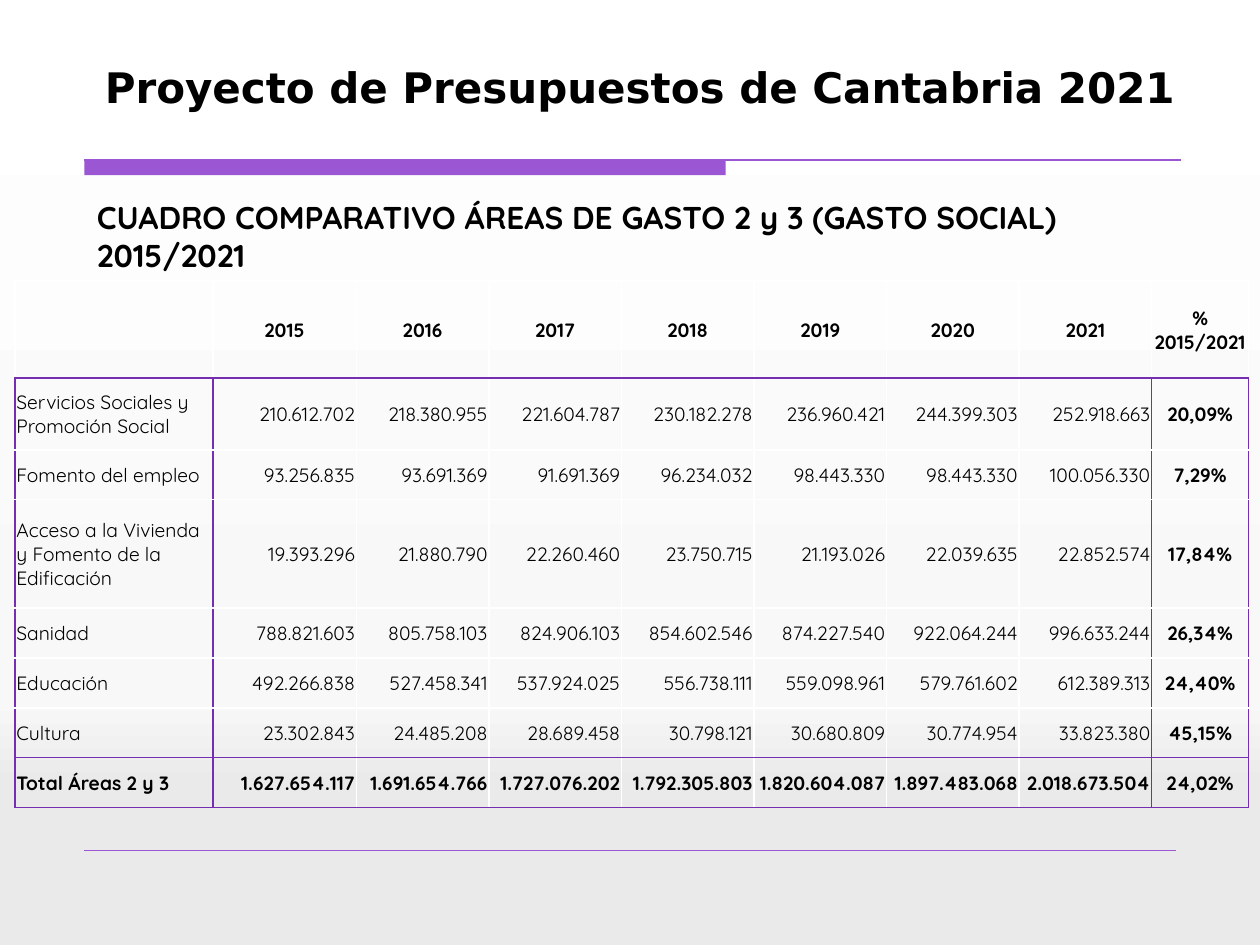
from dataclasses import dataclass
from typing import Any

from lxml import etree
from pptx import Presentation
from pptx.dml.color import RGBColor
from pptx.enum import shapes, text
from pptx.oxml import ns
from pptx.util import Pt

BLACK = RGBColor(0x00, 0x00, 0x00)
WHITE = RGBColor(0xFF, 0xFF, 0xFF)
PURPLE = RGBColor(0x9B, 0x57, 0xD3)
DEEP_PURPLE = RGBColor(0x76, 0x2E, 0xB1)
PALE_GREY = RGBColor(0xF8, 0xF8, 0xF8)
LIGHT_GREY = RGBColor(0xEA, 0xEA, 0xEA)
BACKDROP = [(0, WHITE), (74, PALE_GREY), (83, LIGHT_GREY), (100, LIGHT_GREY)]

LEFT, CENTER, RIGHT = text.PP_ALIGN.LEFT, text.PP_ALIGN.CENTER, text.PP_ALIGN.RIGHT
TITLE_FONT = {"name": "DejaVu Sans", "size": Pt(24), "bold": True}
SUBTITLE_FONT = {"name": "Quicksand", "size": Pt(18), "bold": True}
CELL_FONT = {"name": "Quicksand", "size": Pt(11), "bold": False}
CELL_FORMAT = {
    "margin_left": Pt(0.72),
    "margin_top": Pt(0.72),
    "margin_right": Pt(0.72),
    "margin_bottom": Pt(0),
    "vertical_anchor": text.MSO_ANCHOR.MIDDLE,
}
HEADING_FORMAT = {
    "word_wrap": True,
    "auto_size": text.MSO_AUTO_SIZE.NONE,
    "vertical_anchor": text.MSO_ANCHOR.TOP,
}

COLUMN_WIDTHS = [113, 82] + [75.75] * 6 + [55.5]
ROW_HEIGHTS = [55.5, 41, 28.5, 62] + [28.5] * 4
BUDGET = [
    ["", "2015", "2016", "2017", "2018", "2019", "2020", "2021", "% 2015/2021"],
    ["Servicios Sociales y Promoción Social", "210.612.702", "218.380.955", "221.604.787",
     "230.182.278", "236.960.421", "244.399.303", "252.918.663", "20,09%"],
    ["Fomento del empleo", "93.256.835", "93.691.369", "91.691.369",
     "96.234.032", "98.443.330", "98.443.330", "100.056.330", "7,29%"],
    ["Acceso a la Vivienda y Fomento de la Edificación", "19.393.296", "21.880.790",
     "22.260.460", "23.750.715", "21.193.026", "22.039.635", "22.852.574", "17,84%"],
    ["Sanidad", "788.821.603", "805.758.103", "824.906.103",
     "854.602.546", "874.227.540", "922.064.244", "996.633.244", "26,34%"],
    ["Educación", "492.266.838", "527.458.341", "537.924.025",
     "556.738.111", "559.098.961", "579.761.602", "612.389.313", "24,40%"],
    ["Cultura", "23.302.843", "24.485.208", "28.689.458",
     "30.798.121", "30.680.809", "30.774.954", "33.823.380", "45,15%"],
    ["Total Áreas 2 y 3", "1.627.654.117", "1.691.654.766", "1.727.076.202",
     "1.792.305.803", "1.820.604.087", "1.897.483.068", "2.018.673.504", "24,02%"],
]
TOTAL_ROW = len(BUDGET) - 1
PERCENT_COLUMN = len(COLUMN_WIDTHS) - 1
PURPLE_VERTICALS = {0, 1, PERCENT_COLUMN, PERCENT_COLUMN + 1}
PURPLE_HORIZONTALS = {1, TOTAL_ROW, TOTAL_ROW + 1}


@dataclass
class Rule:
    left: float
    right: float
    top: float
    weight: float


RULES = [Rule(48.24, 674.64, 91.44, 0.75), Rule(48.24, 671.76, 486, 0.25)]


def apply(target: Any, values: dict) -> None:
    for key, value in values.items():
        setattr(target, key, value)


def add_element(parent: Any, tag: str, **attributes: str) -> Any:
    return etree.SubElement(parent, ns.qn(tag), attributes)


def write(frame: Any, words: str, font: dict, align: Any) -> None:
    paragraph = frame.paragraphs[0]
    paragraph.alignment = align
    run = paragraph.add_run()
    run.text = words
    apply(run.font, font)
    run.font.color.rgb = BLACK


def paint_backdrop(slide: Any) -> None:
    fill = slide.background.fill
    fill.gradient()
    fill.gradient_angle = 270
    stops = next(slide.element.iter(ns.qn("a:gsLst")))
    for stop in list(stops):
        stops.remove(stop)
    for percent, color in BACKDROP:
        stop = add_element(stops, "a:gs", pos=str(percent * 1000))
        add_element(stop, "a:srgbClr", val=str(color))


def draw_rule(slide: Any, rule: Rule) -> None:
    line = slide.shapes.add_connector(
        shapes.MSO_CONNECTOR.STRAIGHT,
        Pt(rule.left), Pt(rule.top), Pt(rule.right), Pt(rule.top))
    line.line.color.rgb = PURPLE
    line.line.width = Pt(rule.weight)
    add_element(line.element.spPr, "a:effectLst")


def draw_accent_bar(slide: Any) -> None:
    bar = slide.shapes.add_shape(
        shapes.MSO_SHAPE.RECTANGLE, Pt(48.24), Pt(91.44), Pt(366.5), Pt(8.64))
    bar.shadow.inherit = False
    bar.fill.solid()
    bar.fill.fore_color.rgb = PURPLE
    bar.line.fill.background()


def draw_borders(cell: Any, row: int, column: int) -> None:
    properties = cell._tc.get_or_add_tcPr()
    edges = {
        "a:lnL": row > 0 and column in PURPLE_VERTICALS,
        "a:lnR": row > 0 and column + 1 in PURPLE_VERTICALS,
        "a:lnT": row in PURPLE_HORIZONTALS,
        "a:lnB": row + 1 in PURPLE_HORIZONTALS,
    }
    for tag, is_purple in edges.items():
        edge = add_element(properties, tag, w=str(Pt(1)))
        fill = add_element(edge, "a:solidFill")
        add_element(fill, "a:srgbClr", val=str(DEEP_PURPLE if is_purple else WHITE))


def fill_cell(cell: Any, words: str, row: int, column: int) -> None:
    draw_borders(cell, row, column)
    cell.fill.background()
    apply(cell, CELL_FORMAT)
    if not words:
        return
    if row == 0 or column == PERCENT_COLUMN:
        align = CENTER
    else:
        align = RIGHT if column else LEFT
    bold = row in (0, TOTAL_ROW) or column == PERCENT_COLUMN
    write(cell.text_frame, words, CELL_FONT | {"bold": bold}, align)


def draw_budget(slide: Any) -> None:
    budget = slide.shapes.add_table(
        len(BUDGET), len(COLUMN_WIDTHS), Pt(8.64), Pt(160.56),
        Pt(sum(COLUMN_WIDTHS)), Pt(sum(ROW_HEIGHTS))).table
    apply(budget, {"first_row": False, "horz_banding": False})
    for column, width in zip(budget.columns, COLUMN_WIDTHS):
        column.width = Pt(width)
    for row, height in zip(budget.rows, ROW_HEIGHTS):
        row.height = Pt(height)
    for row, entries in enumerate(BUDGET):
        for column, words in enumerate(entries):
            fill_cell(budget.cell(row, column), words, row, column)


def main() -> None:
    deck = Presentation()
    apply(deck, {"slide_width": Pt(720), "slide_height": Pt(540)})
    slide = deck.slides.add_slide(deck.slide_layouts[5])
    paint_backdrop(slide)

    title = slide.shapes.title
    apply(title, {"left": Pt(48.24), "top": Pt(31.68), "width": Pt(635), "height": Pt(79.92)})
    apply(title.text_frame, HEADING_FORMAT)
    write(title.text_frame, "Proyecto de Presupuestos de Cantabria 2021", TITLE_FONT, CENTER)

    draw_accent_bar(slide)
    for rule in RULES:
        draw_rule(slide, rule)
    draw_budget(slide)

    subtitle = slide.shapes.add_textbox(Pt(48.24), Pt(109.44), Pt(635), Pt(51.12))
    apply(subtitle.text_frame, HEADING_FORMAT)
    write(subtitle.text_frame,
          "CUADRO COMPARATIVO ÁREAS DE GASTO 2 y 3 (GASTO SOCIAL) 2015/2021",
          SUBTITLE_FONT, LEFT)
    deck.save("out.pptx")


if __name__ == "__main__":
    main()
